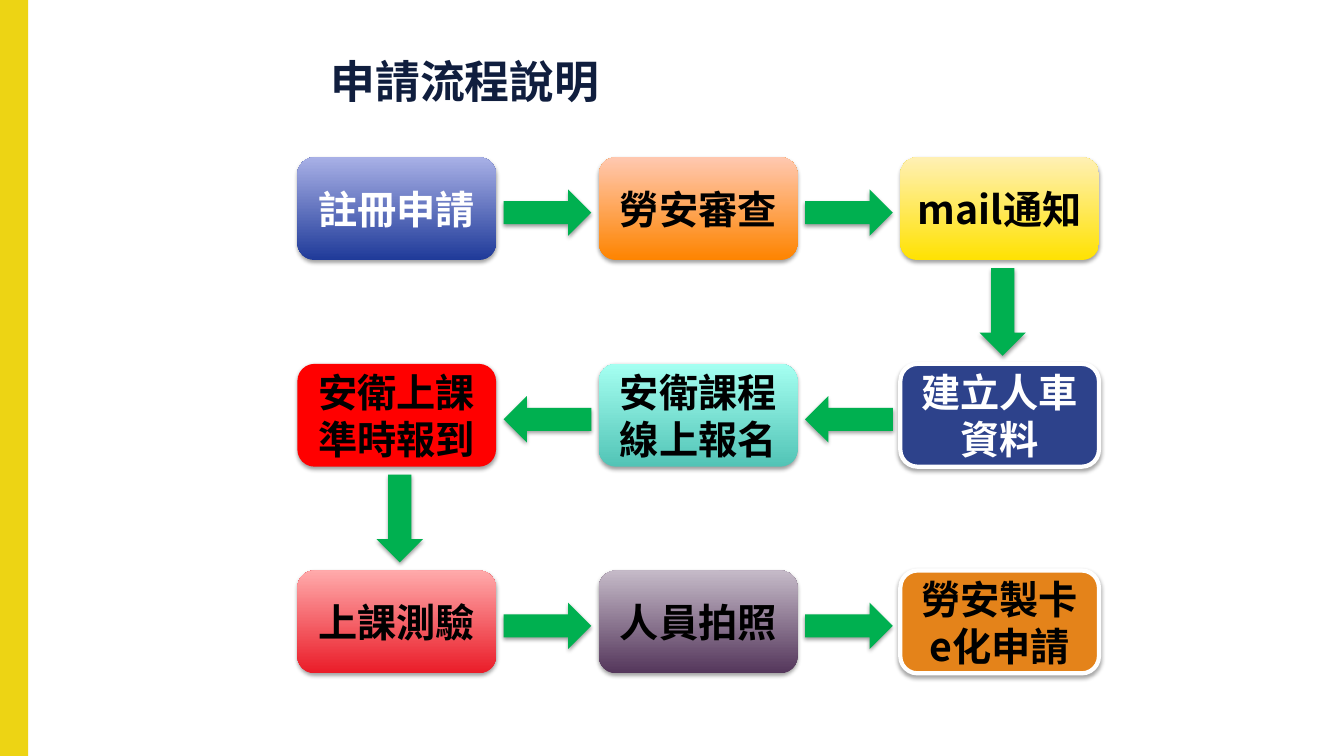
"""Build a slide that shows the application process as a snaking flow."""
from lxml import etree
from pptx import Presentation
from pptx.dml.color import RGBColor
from pptx.enum.shapes import MSO_SHAPE
from pptx.enum.text import MSO_ANCHOR, PP_ALIGN
from pptx.oxml.ns import qn
from pptx.util import Inches, Pt

RECT, BOX, ARROW = MSO_SHAPE.RECTANGLE, MSO_SHAPE.ROUNDED_RECTANGLE, MSO_SHAPE.RIGHT_ARROW
MIDDLE = MSO_ANCHOR.MIDDLE
LEFT, CENTER = PP_ALIGN.LEFT, PP_ALIGN.CENTER

FONT = "Noto Sans CJK SC"
SLIDE_W, SLIDE_H = 13.33, 7.5
GRID_X, GRID_Y = 2.95, 1.56
COL, ROW = 2.99, 2.05
BOX_W, BOX_H = 1.97, 1.02
ARROW_W, ARROW_H = 0.87, 0.46
COLS = 3

COLORS = {
    "bar": "EDD414", "title": "101E3E", "arrow": "00B050",
    "white": "FFFFFF", "black": "000000",
    "blue": "1F3A99", "pale_blue": "A8B0E6",
    "orange": "FE8400", "pale_orange": "FFC8B0",
    "yellow": "FFE202", "pale_yellow": "FFF0B4",
    "navy": "2D428B", "teal": "52C4B6", "pale_teal": "A5FFF1",
    "red": "FF0000", "crimson": "EA1C28", "pink": "FFAAAB",
    "plum": "54365B", "pale_plum": "C5BAC8", "amber": "E4831A",
}

STEPS = [
    ("註冊申請", ("blue", "pale_blue"), "white", False),
    ("勞安審查", ("orange", "pale_orange"), "black", False),
    ("mail通知", ("yellow", "pale_yellow"), "black", False),
    ("建立人車資料", ("navy",), "white", True),
    ("安衛課程線上報名", ("teal", "pale_teal"), "black", False),
    ("安衛上課準時報到", ("red",), "black", False),
    ("上課測驗", ("crimson", "pink"), "black", False),
    ("人員拍照", ("plum", "pale_plum"), "black", False),
    ("勞安製卡e化申請", ("amber",), "black", True),
]


def rgb(name):
    """Return the named colour."""
    return RGBColor.from_string(COLORS[name])


def cell(i):
    """Return the column and row of step i on the snaking path."""
    row, col = divmod(i, COLS)
    return (COLS - 1 - col if row % 2 else col), row


def paint(fill, names):
    """Fill with one colour, or with a gradient rising from the first to the second."""
    if len(names) == 1:
        fill.solid()
        fill.fore_color.rgb = rgb(names[0])
        return
    fill.gradient()
    fill.gradient_angle = 90
    for stop, name in zip(fill.gradient_stops, names):
        stop.color.rgb = rgb(name)


def add_shadow(s, alpha=38, dist=1.6):
    """Give the shape a soft shadow straight below it."""
    effects = s._element.spPr.find(qn("a:effectLst"))
    shadow = etree.SubElement(effects, qn("a:outerShdw"), blurRad=str(Pt(3)),
                              dist=str(Pt(dist)), dir="5400000", rotWithShape="0")
    color = etree.SubElement(shadow, qn("a:srgbClr"), val=COLORS["black"])
    etree.SubElement(color, qn("a:alpha"), val=str(alpha * 1000))


def add_shape(slide, kind, x, y, w, h, fill):
    """Add a filled preset shape without an outline."""
    s = slide.shapes.add_shape(kind, *map(Inches, (x, y, w, h)))
    s.shadow.inherit = False
    paint(s.fill, fill)
    s.line.fill.background()
    return s


def write(tf, text, size, color, align):
    """Write one bold paragraph, centred vertically."""
    tf.word_wrap = True
    tf.vertical_anchor = MIDDLE
    p = tf.paragraphs[0]
    p.alignment = align
    p.line_spacing = Pt(round(size * 1.22))
    r = p.add_run()
    r.text = text
    for key, value in {"size": Pt(size), "bold": True, "name": FONT}.items():
        setattr(r.font, key, value)
    r.font.color.rgb = rgb(color)
    etree.SubElement(r._r.get_or_add_rPr(), qn("a:ea"), typeface=FONT)


def add_title(slide, text):
    """Add the slide title."""
    s = slide.shapes.add_textbox(*map(Inches, (3.18, 0.46, 7.09, 0.68)))
    write(s.text_frame, text, 32, "title", LEFT)


def add_step(slide, i, text, fill, color, framed):
    """Add the box of step i at its place on the grid."""
    col, row = cell(i)
    s = add_shape(slide, BOX, GRID_X + col * COL, GRID_Y + row * ROW, BOX_W, BOX_H, fill)
    if framed:
        s.line.color.rgb = rgb("white")
        s.line.width = Pt(3)
        add_shadow(s, 35, 1.8)
    else:
        add_shadow(s)
    write(s.text_frame, text, 28, color, CENTER)


def add_arrow(slide, i):
    """Add the arrow halfway between step i and the next one."""
    (col, row), (next_col, next_row) = cell(i), cell(i + 1)
    down = next_row > row
    x = GRID_X + (col + next_col) / 2 * COL + BOX_W / 2 + (0.03 if down else 0)
    y = GRID_Y + (row + next_row) / 2 * ROW + BOX_H / 2 + (0 if down else 0.04)
    s = add_shape(slide, ARROW, x - ARROW_W / 2, y - ARROW_H / 2, ARROW_W, ARROW_H, ["arrow"])
    s.rotation = 90 if down else 180 if next_col < col else 0
    add_shadow(s)


def main():
    """Build and save the slide."""
    prs = Presentation()
    prs.slide_width, prs.slide_height = Inches(SLIDE_W), Inches(SLIDE_H)
    slide = prs.slides.add_slide(prs.slide_layouts[6])
    add_shape(slide, RECT, 0, 0, 0.28, SLIDE_H, ["bar"])
    add_title(slide, "申請流程說明")
    for i, step in enumerate(STEPS):
        add_step(slide, i, *step)
    for i in range(len(STEPS) - 1):
        add_arrow(slide, i)
    prs.save("out.pptx")


if __name__ == "__main__":
    main()
